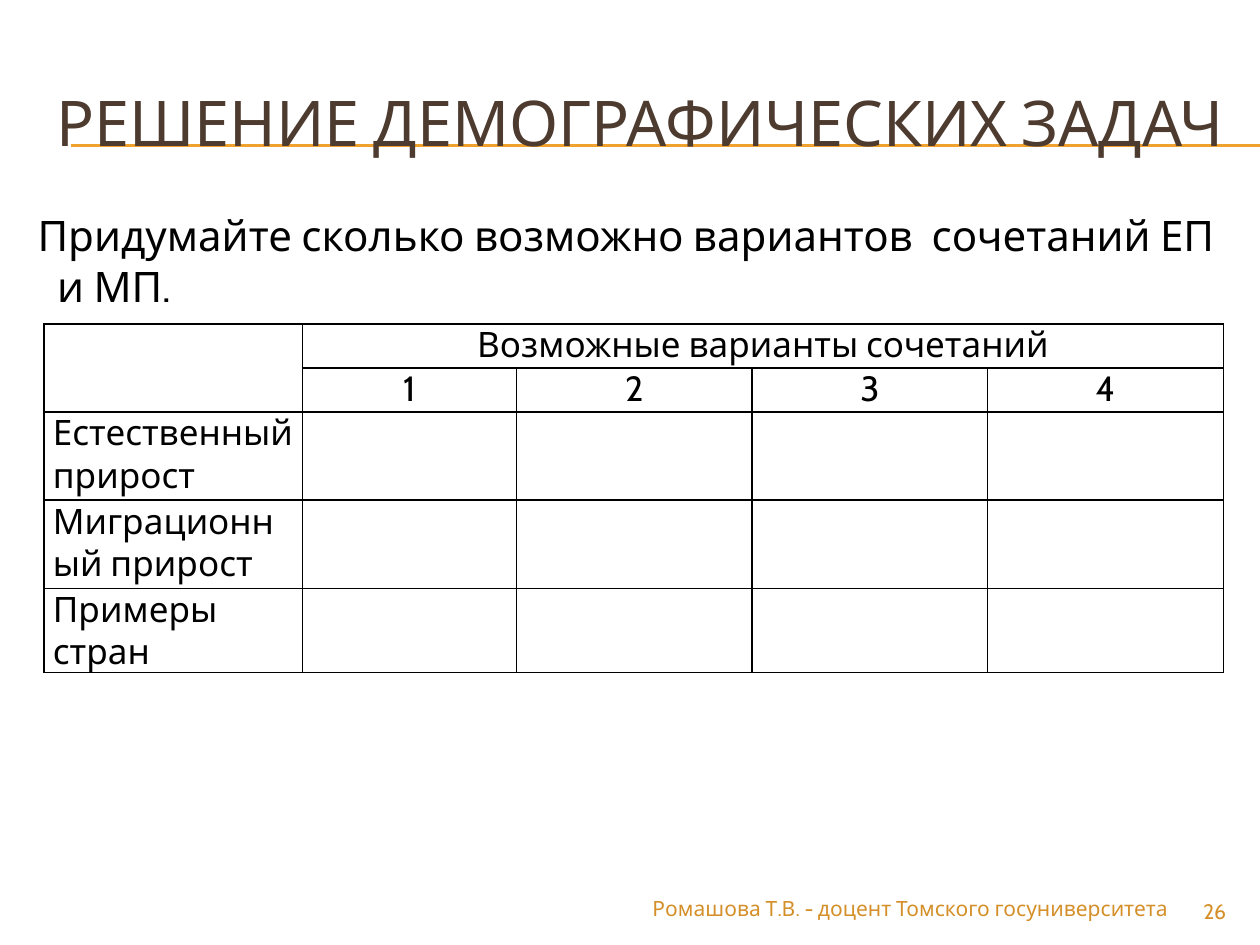
from lxml.etree import SubElement
from pptx import Presentation
from pptx.dml.color import RGBColor
from pptx.enum.shapes import MSO_CONNECTOR
from pptx.enum.text import MSO_ANCHOR, PP_ALIGN
from pptx.oxml.ns import qn
from pptx.util import Inches, Pt

FONT = "Cabin"
COLORS = {"rule": "F0A22E", "title": "4E3B30", "text": "000000", "footer": "D48F29"}
COLUMNS = [2.05, 1.7, 1.87, 1.87, 1.87]
ROWS = [0.35, 0.35, 0.7, 0.7, 0.66]
ROW_LABELS = ["Естественный прирост", "Миграционный прирост", "Примеры стран"]


def set_text(tf, text, size, color, align):
    tf.text = text
    p = tf.paragraphs[0]
    p.alignment = align
    for r in p.runs:
        r.font.name = FONT
        r.font.size = Pt(size)
        r.font.color.rgb = RGBColor.from_string(COLORS[color])


def add_text(s, box, text, size, color, align=PP_ALIGN.LEFT, anchor=MSO_ANCHOR.TOP):
    tf = s.shapes.add_textbox(*(Inches(v) for v in box)).text_frame
    tf.word_wrap = True
    tf.vertical_anchor = anchor
    set_text(tf, text, size, color, align)
    return tf


def add_rule(s, y):
    line = s.shapes.add_connector(
        MSO_CONNECTOR.STRAIGHT, Inches(0.56), Inches(y), Inches(10), Inches(y))
    line.line.color.rgb = RGBColor.from_string(COLORS["rule"])
    line.line.width = Pt(0.75)
    SubElement(line._element.spPr, qn("a:effectLst"))


def add_borders(cell):
    tcPr = cell._tc.get_or_add_tcPr()
    for i, side in enumerate(("a:lnL", "a:lnR", "a:lnT", "a:lnB")):
        ln = tcPr.makeelement(qn(side), {"w": str(Pt(1))})
        fill = SubElement(ln, qn("a:solidFill"))
        SubElement(fill, qn("a:srgbClr"), val=COLORS["text"])
        tcPr.insert(i, ln)


def set_cell(cell, text, align=PP_ALIGN.LEFT):
    set_text(cell.text_frame, text, 20, "text", align)


def add_variants_table(s):
    table = s.shapes.add_table(
        len(ROWS), len(COLUMNS), Inches(0.35), Inches(2.57),
        Inches(sum(COLUMNS)), Inches(sum(ROWS))).table
    table.first_row = table.horz_banding = False
    for column, width in zip(table.columns, COLUMNS):
        column.width = Inches(width)
    for row, height in zip(table.rows, ROWS):
        row.height = Inches(height)
    for cell in table.iter_cells():
        cell.fill.background()
        cell.margin_left = cell.margin_right = Inches(0.07)
        cell.margin_top = cell.margin_bottom = 0
        add_borders(cell)
    table.cell(0, 0).merge(table.cell(1, 0))
    table.cell(0, 1).merge(table.cell(0, 4))
    set_cell(table.cell(0, 1), "Возможные варианты сочетаний", PP_ALIGN.CENTER)
    for n in range(1, len(COLUMNS)):
        set_cell(table.cell(1, n), str(n), PP_ALIGN.CENTER)
    for n, label in enumerate(ROW_LABELS, 2):
        set_cell(table.cell(n, 0), label)


def add_task(s):
    tf = add_text(s, (0.2, 1.81, 9.57, 0.81),
                  "Придумайте сколько возможно вариантов  сочетаний ЕП  и МП.",
                  24, "text", anchor=MSO_ANCHOR.MIDDLE)
    tf.margin_bottom = Inches(0.35)
    pPr = tf.paragraphs[0]._p.get_or_add_pPr()
    pPr.set("marL", str(Inches(0.08)))
    pPr.set("indent", str(-Inches(0.08)))


def main():
    prs = Presentation()
    prs.slide_width, prs.slide_height = Inches(10), Inches(7.5)
    s = prs.slides.add_slide(prs.slide_layouts[6])
    for y in (1.15, 1.16):
        add_rule(s, y)
    add_text(s, (0.33, 0.5, 9.5, 0.92), "РЕШЕНИЕ ДЕМОГРАФИЧЕСКИХ ЗАДАЧ",
             36, "title", PP_ALIGN.CENTER, MSO_ANCHOR.MIDDLE)
    add_variants_table(s)
    add_task(s)
    add_text(s, (9, 7.08, 0.83, 0.27), "26", 12, "footer", PP_ALIGN.RIGHT)
    add_text(s, (4.29, 7.06, 5.12, 0.44),
             "Ромашова Т.В. - доцент Томского госуниверситета ",
             12, "footer", PP_ALIGN.RIGHT)
    prs.save("out.pptx")


if __name__ == "__main__":
    main()
